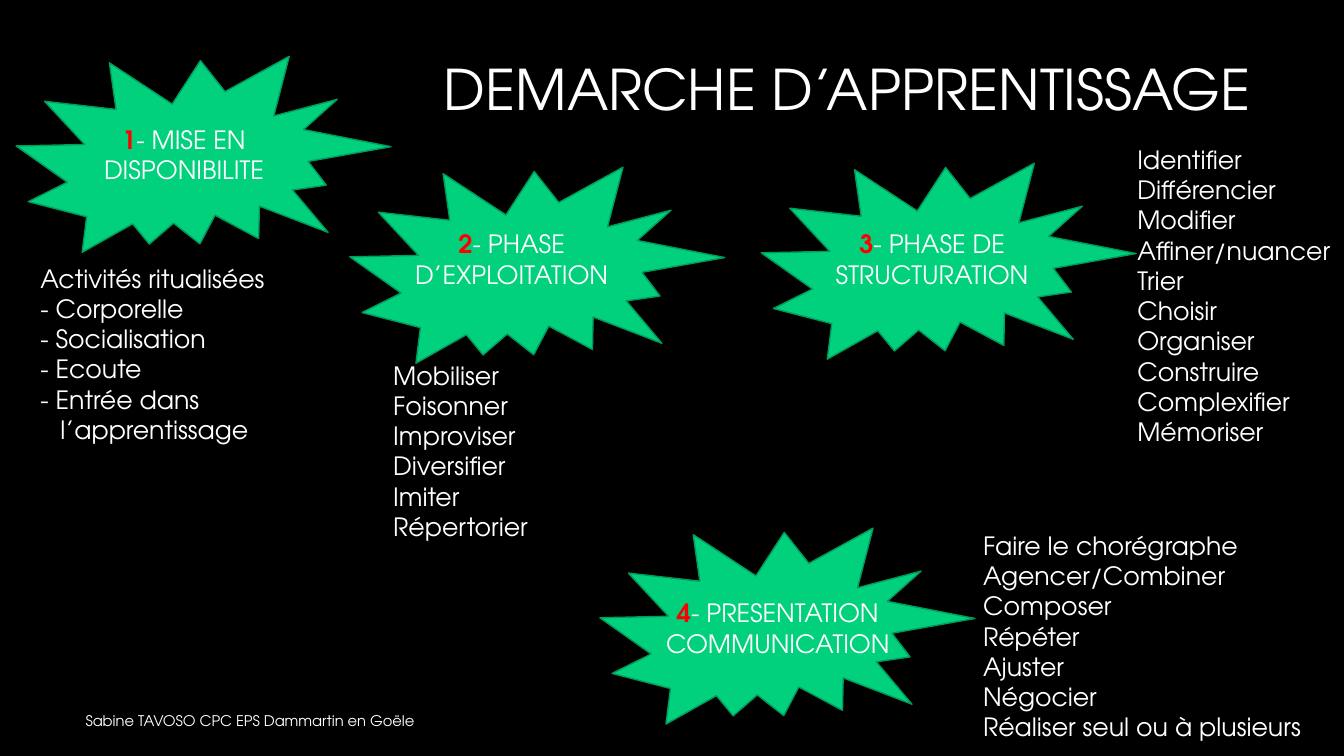
"""Builds a slide on the four phases of a learning process."""
from pptx import Presentation
from pptx import util as u
from pptx.dml.color import RGBColor
from pptx.enum import shapes, text
from pptx.oxml.ns import qn
from lxml import etree

BLACK = RGBColor(0x00, 0x00, 0x00)
WHITE = RGBColor(0xFF, 0xFF, 0xFF)
RED = RGBColor(0xFF, 0x00, 0x00)
GREEN = RGBColor(0x01, 0xD1, 0x7D)
DARK_GREEN = RGBColor(0x01, 0x9B, 0x5C)

PHASES = [
    ((17, 42), (56, 118), "1", "- MISE EN DISPONIBILITE"),
    ((348, 152), (381, 222), "2", "- PHASE D’EXPLOITATION"),
    ((756, 148), (798, 222), "3", "- PHASE DE STRUCTURATION"),
    ((596, 510), (645, 588), "4", "- PRESENTATION\nCOMMUNICATION"),
]
LISTS = [
    ((30, 256, 300, 192), ["Activités ritualisées", "- Corporelle", "- Socialisation",
                           "- Ecoute", "- Entrée dans\vl’apprentissage"]),
    ((380, 352, 224, 192), ["Mobiliser", "Foisonner", "Improviser", "Diversifier",
                            "Imiter", "Répertorier"]),
    ((1118, 138, 216, 313), ["Identifier", "Différencier", "Modifier", "Affiner/nuancer",
                             "Trier", "Choisir", "Organiser", "Construire",
                             "Complexifier", "Mémoriser"]),
    ((965, 521, 348, 222), ["Faire le chorégraphe Agencer/Combiner", "Composer", "Répéter",
                            "Ajuster", "Négocier", "Réaliser seul ou à plusieurs"]),
]


class Board:
    SCALE = 9144
    FONT = "TeX Gyre Adventor"
    COMPARISON_LAYOUT = 5 - 1

    def __init__(self, presentation):
        presentation.slide_width = self.px(1333)
        presentation.slide_height = self.px(750)
        layout = presentation.slide_layouts[self.COMPARISON_LAYOUT]
        self.slide = presentation.slides.add_slide(layout)
        self.slide.background.fill.solid()
        self.slide.background.fill.fore_color.rgb = BLACK

    def px(self, length):
        return u.Emu(length * self.SCALE)

    def place(self, shape, box):
        shape.left, shape.top, shape.width, shape.height = map(self.px, box)

    def style(self, paragraph, size=18, align=text.PP_ALIGN.LEFT):
        paragraph.alignment = align
        paragraph.font.name = self.FONT
        paragraph.font.size = u.Pt(size)
        paragraph.font.color.rgb = WHITE

    def frame(self, shape, anchor=text.MSO_ANCHOR.TOP):
        frame = shape.text_frame
        frame.word_wrap = True
        frame.auto_size = text.MSO_AUTO_SIZE.NONE
        frame.vertical_anchor = anchor
        return frame

    def text_box(self, box, anchor=text.MSO_ANCHOR.TOP):
        return self.frame(self.slide.shapes.add_textbox(*map(self.px, box)), anchor)

    def title(self, box, words):
        shape = self.slide.shapes.title
        self.place(shape, box)
        frame = self.frame(shape, text.MSO_ANCHOR.MIDDLE)
        frame.text = words
        self.style(frame.paragraphs[0], 40, text.PP_ALIGN.RIGHT)
        frame.paragraphs[0].line_spacing = 0.9

    def word_list(self, placeholder, box, lines):
        self.place(placeholder, box)
        frame = self.frame(placeholder)
        frame.text = "\n".join(lines)
        for paragraph, line in zip(frame.paragraphs, lines):
            hanging = self.px(20 if line.startswith("-") else 0)
            properties = paragraph._p.get_or_add_pPr()
            properties.set("marL", str(hanging))
            properties.set("indent", str(-hanging))
            etree.SubElement(properties, qn("a:buNone"))
            self.style(paragraph)
            paragraph.font.bold = False
            paragraph.space_before = u.Pt(0)

    def star(self, corner):
        box = map(self.px, (*corner, 366, 228))
        star = self.slide.shapes.add_shape(shapes.MSO_SHAPE.EXPLOSION2, *box)
        star.rotation = 10.3
        star.shadow.inherit = False
        star.fill.solid()
        star.fill.fore_color.rgb = GREEN
        star.line.color.rgb = DARK_GREEN
        star.line.width = u.Pt(1)

    def star_label(self, corner, number, words):
        frame = self.text_box((*corner, 253, 71))
        first, *others = words.split("\n")
        paragraph = frame.paragraphs[0]
        digit = paragraph.add_run()
        digit.text = number
        digit.font.bold = True
        digit.font.color.rgb = RED
        paragraph.add_run().text = first
        for line in others:
            frame.add_paragraph().text = line
        for paragraph in frame.paragraphs:
            self.style(paragraph, align=text.PP_ALIGN.CENTER)

    def credit(self, box, words):
        frame = self.text_box(box, text.MSO_ANCHOR.MIDDLE)
        frame.text = words
        self.style(frame.paragraphs[0], 10.5)


def main():
    presentation = Presentation()
    board = Board(presentation)
    board.title((308, 21, 942, 141), "DEMARCHE D’APPRENTISSAGE")
    bodies = list(board.slide.placeholders)[1:]
    for body, (box, lines) in zip(bodies, LISTS):
        board.word_list(body, box, lines)
    for star_corner, label_corner, number, words in PHASES:
        board.star(star_corner)
        board.star_label(label_corner, number, words)
    board.credit((75, 695, 850, 40), "Sabine TAVOSO CPC EPS Dammartin en Goële")
    presentation.save("out.pptx")


if __name__ == "__main__":
    main()
